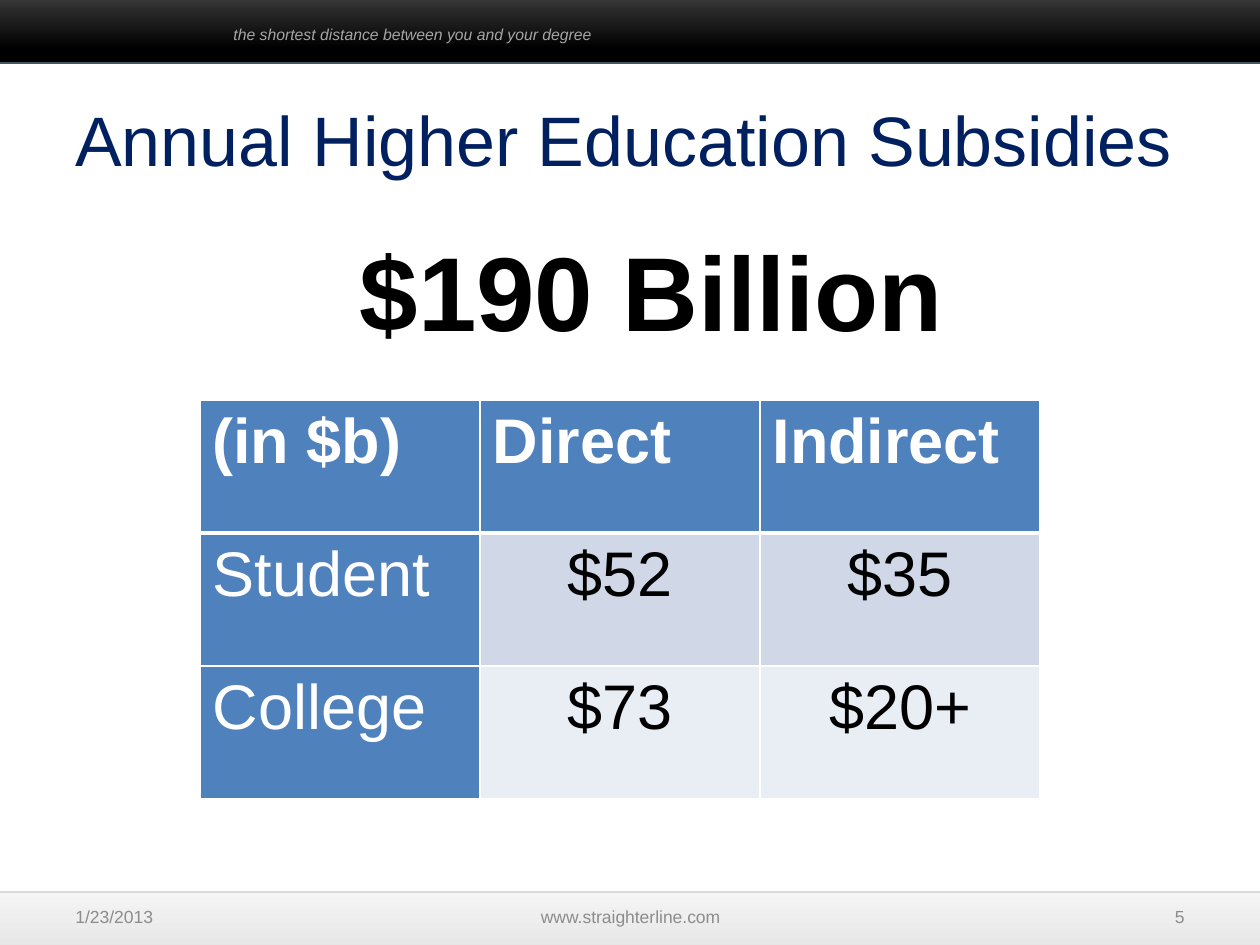
from lxml import etree
from pptx import Presentation
from pptx.dml.color import RGBColor
from pptx.enum.shapes import MSO_SHAPE
from pptx.enum.text import MSO_ANCHOR, PP_ALIGN
from pptx.oxml.ns import qn
from pptx.util import Emu, Pt

EMU_PER_PX = 914400 / 126
RECTANGLE = MSO_SHAPE.RECTANGLE
TOP, MIDDLE = MSO_ANCHOR.TOP, MSO_ANCHOR.MIDDLE
LEFT, CENTER, RIGHT = PP_ALIGN.LEFT, PP_ALIGN.CENTER, PP_ALIGN.RIGHT

WHITE = RGBColor(0xFF, 0xFF, 0xFF)
BLACK = RGBColor(0, 0, 0)
NAVY = RGBColor(0x00, 0x20, 0x60)
BLUE = RGBColor(0x4F, 0x81, 0xBD)
BAND_DARK = RGBColor(0xD0, 0xD8, 0xE8)
BAND_LIGHT = RGBColor(0xE9, 0xED, 0xF4)
CHARCOAL = RGBColor(0x40, 0x40, 0x40)
SLATE = RGBColor(0x45, 0x55, 0x60)
TAGLINE_GRAY = RGBColor(0xA6, 0xA6, 0xA6)
FOOTER_GRAY = RGBColor(0x8C, 0x8C, 0x8C)
PALE_GRAY = RGBColor(0xF2, 0xF2, 0xF2)
EDGE_GRAY = RGBColor(0xD9, 0xD9, 0xD9)

SUBSIDIES = [
    ["(in $b)", "Direct", "Indirect"],
    ["Student", "$52", "$35"],
    ["College", "$73", "$20+"],
]


def px(length):
    return Emu(round(length * EMU_PER_PX))


def write(frame, text, *, size, color, bold=False, italic=False, align=LEFT):
    para = frame.paragraphs[0]
    para.alignment = align
    span = para.add_run()
    span.text = text
    font = span.font
    font.name = "Arial"
    font.size = Pt(size)
    font.bold = bold
    font.italic = italic
    font.color.rgb = color


def add_text(page, box, text, *, anchor=TOP, inset=6, **style):
    frame = page.shapes.add_textbox(*map(px, box)).text_frame
    frame.word_wrap = True
    frame.vertical_anchor = anchor
    frame.margin_top = px(inset)
    write(frame, text, **style)


def add_bar(page, box, stops, line_color, line_width, opacity=100):
    bar = page.shapes.add_shape(RECTANGLE, *map(px, box))
    bar.shadow.inherit = False
    bar.fill.gradient()
    bar.fill.gradient_angle = 270
    for stop, (position, color) in zip(bar.fill.gradient_stops, stops):
        stop.position = position
        stop.color.rgb = color
    if opacity < 100:
        for color in bar._element.spPr.iter(qn("a:srgbClr")):
            etree.SubElement(color, qn("a:alpha"), val=str(opacity * 1000))
    bar.line.color.rgb = line_color
    bar.line.width = Pt(line_width)


def add_header(page, box):
    left, top, width, height = box
    add_bar(page, box, [(0, CHARCOAL), (0.81, BLACK)], SLATE, 1.5)
    add_text(page, (left + 231, top + 29, 661, 32),
             "the shortest distance between you and your degree",
             size=9, color=TAGLINE_GRAY, italic=True)


def add_footer(page, box):
    left, top, width, height = box
    add_bar(page, box, [(0, PALE_GRAY), (1, EDGE_GRAY)], EDGE_GRAY, 1, opacity=70)
    for offset, span_width, text, align in [
        (73, 294, "1/23/2013", LEFT),
        (441, 399, "www.straighterline.com", CENTER),
        (913, 294, "5", RIGHT),
    ]:
        add_text(page, (left + offset, top, span_width, 50), text,
                 anchor=MIDDLE, size=10, color=FOOTER_GRAY, align=align)


def set_borders(cell, **widths):
    properties = cell._tc.get_or_add_tcPr()
    for index, side in enumerate("LRTB"):
        line = etree.Element(qn(f"a:ln{side}"), w=str(Pt(widths.get(side, 1))))
        fill = etree.SubElement(line, qn("a:solidFill"))
        etree.SubElement(fill, qn("a:srgbClr"), val=str(WHITE))
        properties.insert(index, line)


def add_subsidy_table(page, box):
    rows, columns = len(SUBSIDIES), len(SUBSIDIES[0])
    table = page.shapes.add_table(rows, columns, *map(px, box)).table
    for column in table.columns:
        column.width = px(box[2] // columns)
    for row in table.rows:
        row.height = px(box[3] // rows)
    header_borders = [{"B": 3}, {"T": 3}, {}]
    bands = [BLUE, BAND_DARK, BAND_LIGHT]
    for r, values in enumerate(SUBSIDIES):
        for c, value in enumerate(values):
            cell = table.cell(r, c)
            is_label = r == 0 or c == 0
            cell.fill.solid()
            cell.fill.fore_color.rgb = BLUE if is_label else bands[r]
            set_borders(cell, **header_borders[r])
            write(cell.text_frame, value, size=36, bold=r == 0,
                  color=WHITE if is_label else BLACK,
                  align=LEFT if is_label else CENTER)


def main():
    deck = Presentation()
    deck.slide_width, deck.slide_height = px(1260), px(945)
    page = deck.slides.add_slide(deck.slide_layouts[6])
    add_footer(page, (-10, 892, 1281, 63))
    add_header(page, (-10, -10, 1281, 73))
    add_subsidy_table(page, (200, 400, 840, 399))
    add_text(page, (284, 210, 735, 140), "$190 Billion", inset=17,
             size=60, color=BLACK, bold=True, align=CENTER)
    add_text(page, (63, 84, 1134, 158), "Annual Higher Education Subsidies",
             inset=13, size=40, color=NAVY)
    deck.save("out.pptx")


if __name__ == "__main__":
    main()
